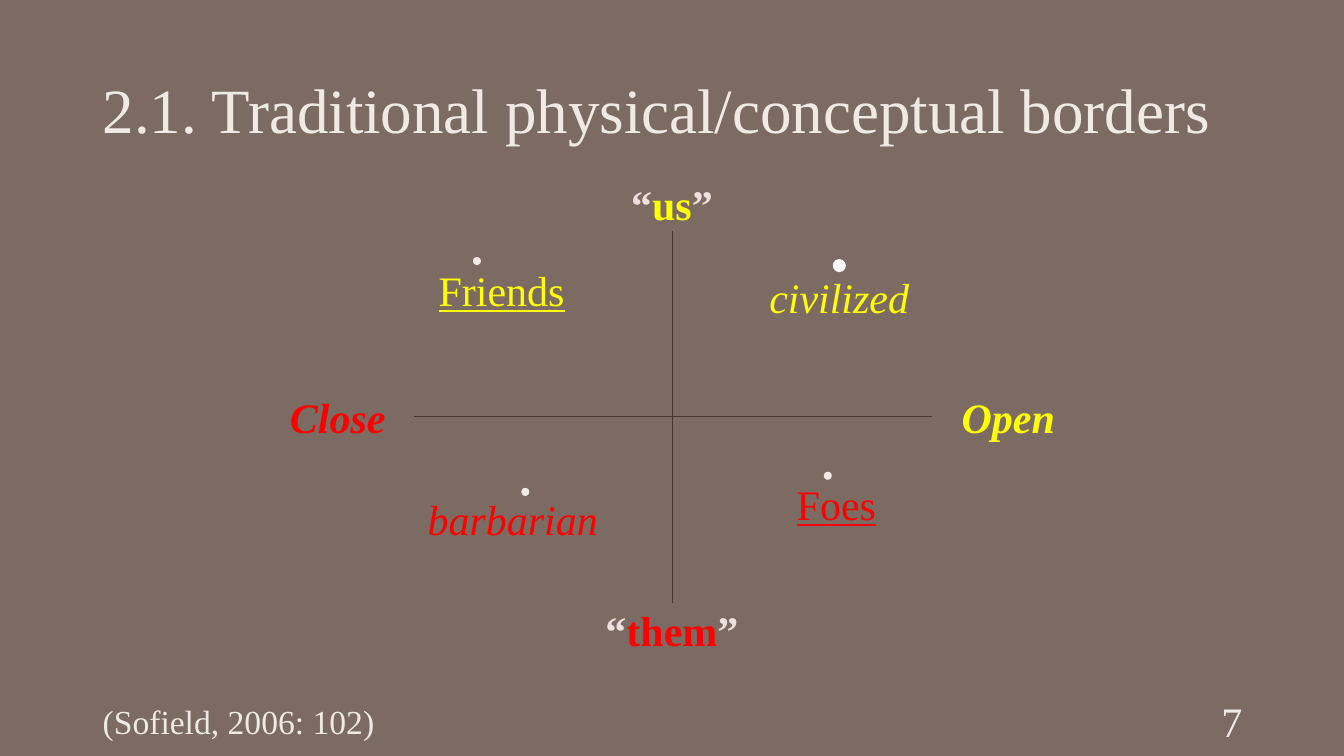
from pptx import Presentation
from pptx import util as u
from pptx.dml.color import RGBColor
from pptx.enum import shapes, text
from pptx.oxml.ns import qn
from lxml import etree

FONT = "Times New Roman"
COLORS = {
    "background": "7C6B62",
    "axis": "463931",
    "light": "EFEAE4",
    "quote": "EEE0DD",
    "us": "FFFF00",
    "them": "FF0000",
    "white": "FFFFFF",
}


def color(name):
    return RGBColor.from_string(COLORS[name])


def add_text(slide, runs, left, top, width, height=0.54, size=30,
             align=text.PP_ALIGN.CENTER, spacing=1.0,
             bold=False, italic=False, underline=False):
    """Add one line of text; runs is a list of (wording, colour name)."""
    frame = slide.shapes.add_textbox(
        u.Inches(left), u.Inches(top), u.Inches(width), u.Inches(height)).text_frame
    frame.word_wrap = True
    frame.vertical_anchor = text.MSO_ANCHOR.MIDDLE
    frame.margin_top = frame.margin_bottom = 0
    line = frame.paragraphs[0]
    line.alignment = align
    line.line_spacing = spacing
    for wording, color_name in runs:
        run = line.add_run()
        run.text = wording
        run.font.name = FONT
        run.font.size = u.Pt(size)
        run.font.color.rgb = color(color_name)
        run.font.bold = bold
        run.font.italic = italic
        run.font.underline = underline


def add_axis(slide, x1, y1, x2, y2):
    axis = slide.shapes.add_connector(
        shapes.MSO_CONNECTOR.STRAIGHT,
        u.Inches(x1), u.Inches(y1), u.Inches(x2), u.Inches(y2))
    axis.line.color.rgb = color("axis")
    axis.line.width = u.Pt(0.5)
    etree.SubElement(axis._element.spPr, qn("a:effectLst"))


def add_dot(slide, left, top, size=0.08, fill="light"):
    dot = slide.shapes.add_shape(
        shapes.MSO_SHAPE.OVAL,
        u.Inches(left), u.Inches(top), u.Inches(size), u.Inches(size))
    dot.shadow.inherit = False
    dot.fill.solid()
    dot.fill.fore_color.rgb = color(fill)
    dot.line.fill.background()


def main():
    deck = Presentation()
    deck.slide_width, deck.slide_height = u.Inches(13.33), u.Inches(7.5)
    slide = deck.slides.add_slide(deck.slide_layouts[6])
    slide.background.fill.solid()
    slide.background.fill.fore_color.rgb = color("background")

    # Axes
    add_axis(slide, 4.11, 4.13, 9.24, 4.13)
    add_axis(slide, 6.67, 5.98, 6.67, 2.29)

    # Title
    add_text(slide, [("2.1. Traditional physical/conceptual borders", "light")],
             0.92, 0.4, 11.5, 1.45, size=45, align=text.PP_ALIGN.LEFT, spacing=0.9)

    # Axis ends
    for side, top in (("us", 1.75), ("them", 5.98)):
        add_text(slide, [("“", "quote"), (side, side), ("”", "quote")],
                 5.73, top, 1.87, bold=True)
    for end, side, left in (("Close", "them", 2.59), ("Open", "us", 9.24)):
        add_text(slide, [(end, side)], left, 3.86, 1.52, bold=True, italic=True)

    # Quadrant labels
    add_text(slide, [("Friends", "us")], 4.09, 2.6, 1.77, underline=True)
    add_text(slide, [("civilized", "us")], 7.39, 2.37, 1.87, 1.15, italic=True)
    add_text(slide, [("barbarian", "them")], 4.09, 4.88, 1.99, italic=True)
    add_text(slide, [("Foes", "them")], 7.17, 4.73, 2.25, underline=True)

    # Quadrant dots
    for left, top in ((4.69, 2.55), (5.17, 4.84), (8.17, 4.68)):
        add_dot(slide, left, top)
    add_dot(slide, 8.26, 2.57, size=0.13, fill="white")

    # Citation and slide number
    add_text(slide, [("(Sofield, 2006: 102)", "light")], 0.92, 6.95, 3, 0.4,
             size=24, align=text.PP_ALIGN.LEFT)
    add_text(slide, [("7", "light")], 9.42, 6.95, 3, 0.4,
             align=text.PP_ALIGN.RIGHT)

    deck.save("out.pptx")


if __name__ == "__main__":
    main()
